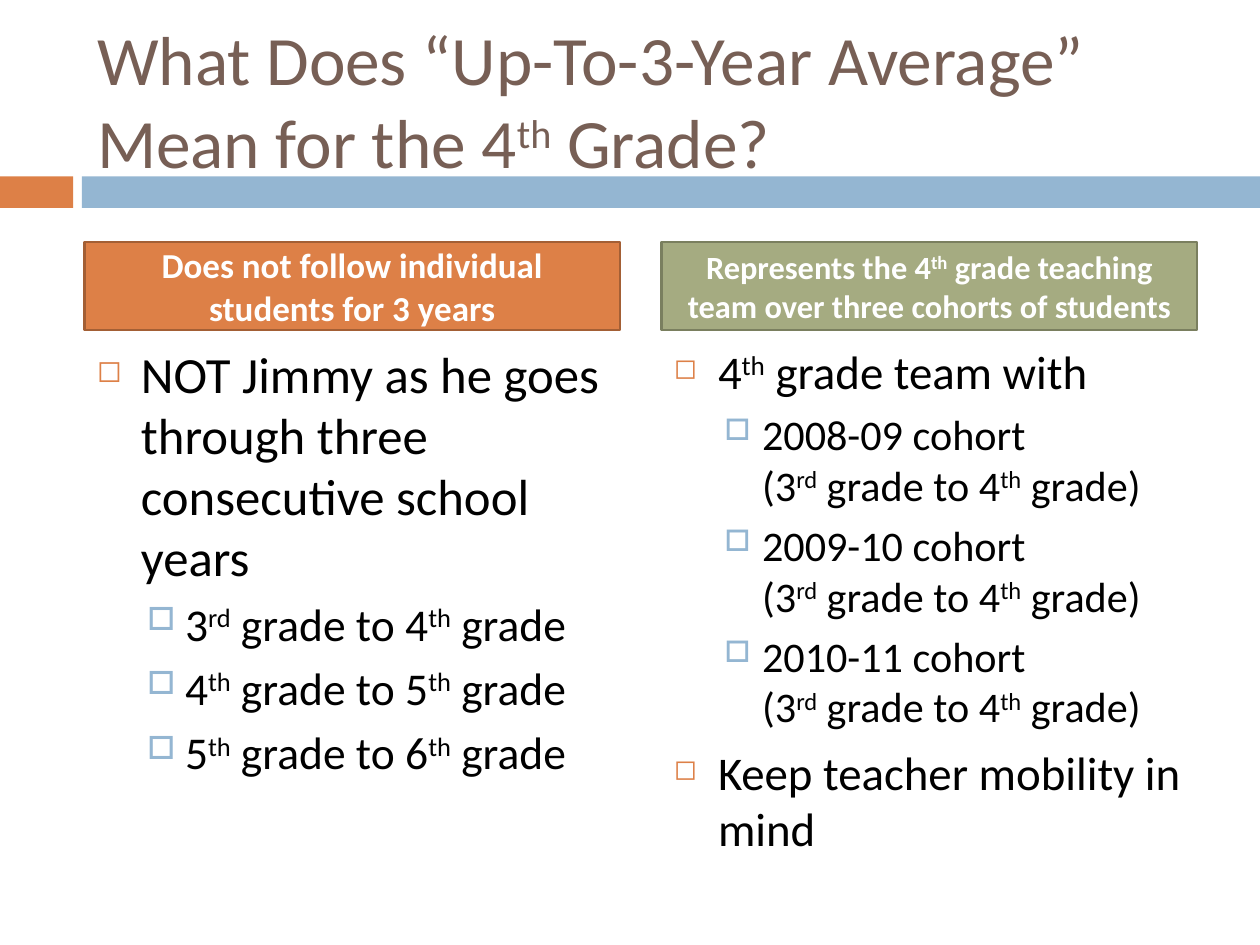
from collections import namedtuple

from lxml.etree import SubElement
from pptx import Presentation
from pptx.dml.color import RGBColor
from pptx.enum.shapes import MSO_SHAPE as Shape
from pptx.enum.text import MSO_ANCHOR as Anchor, MSO_AUTO_SIZE as AutoSize, PP_ALIGN as Align
from pptx.oxml.ns import qn
from pptx.util import Inches, Pt

ORANGE = RGBColor(0xDD, 0x80, 0x47)
DARK_ORANGE = RGBColor(0xA3, 0x5F, 0x35)
BLUE = RGBColor(0x94, 0xB6, 0xD2)
GREEN = RGBColor(0xA5, 0xAB, 0x81)
DARK_GREEN = RGBColor(0x7A, 0x7F, 0x5F)
BROWN = RGBColor(0x77, 0x5F, 0x55)
BLACK = RGBColor(0, 0, 0)
WHITE = RGBColor(0xFF, 0xFF, 0xFF)

Box = namedtuple("Box", "left top width height")
Level = namedtuple("Level", "margin hanging before mark color percent")
LEVELS = [Level(0.35, 0.35, 7, "◻", ORANGE, 60), Level(0.7, 0.3, 5.5, "□", BLUE, 70)]

MARGIN, COLUMN_WIDTH, COLUMN_STEP = 0.67, 4.25, 4.58
HEADER_HEIGHT, HEADER_GAP = 0.7, 0.05

TITLE = "What Does “Up-To-3-Year Average” Mean for the 4^th^ Grade?"
LEFT_ITEMS = [(0, "NOT Jimmy as he goes through three consecutive school years")] + [
    (1, f"{start} grade to {end} grade")
    for start, end in [("3^rd^", "4^th^"), ("4^th^", "5^th^"), ("5^th^", "6^th^")]
]
RIGHT_ITEMS = (
    [(0, "4^th^ grade team with")]
    + [(1, f"{years} cohort \n(3^rd^ grade to 4^th^ grade)")
       for years in ("2008-09", "2009-10", "2010-11")]
    + [(0, "Keep teacher mobility in mind")]
)


def inches(box):
    """Return the box as lengths for a shape."""
    return [Inches(value) for value in box]


def write(para, text, size, color, bold=False):
    """Fill a paragraph, raising the parts between carets."""
    for index, part in enumerate(text.split("^")):
        for row, line in enumerate(part.split("\n")):
            if row:
                para.add_line_break()
            span = para.add_run()
            span.text = line
            if index % 2:
                span.font._element.set("baseline", "30000")
    font = para.font
    font.name, font.size, font.bold = "Calibri", Pt(size), bold
    font.color.rgb = color


def add_bullet(para, level):
    """Give a paragraph the indent and mark of its level."""
    props = para._p.get_or_add_pPr()
    props.set("marL", str(Inches(level.margin)))
    props.set("indent", str(-Inches(level.hanging)))
    color = SubElement(props, qn("a:buClr"))
    SubElement(color, qn("a:srgbClr"), val=str(level.color))
    SubElement(props, qn("a:buSzPct"), val=str(level.percent * 1000))
    SubElement(props, qn("a:buChar"), char=level.mark)


def add_block(page, box, fill, line=None):
    """Add a filled rectangle, outlined when a line colour is given."""
    block = page.shapes.add_shape(Shape.RECTANGLE, *inches(box))
    block.shadow.inherit = False
    block.fill.solid()
    block.fill.fore_color.rgb = fill
    if line is None:
        block.line.fill.background()
    else:
        block.line.color.rgb = line
        block.line.width = Pt(1.5)
    return block


def add_band(page, box, split, gap):
    """Place the two-coloured band below the title."""
    add_block(page, box._replace(width=split), ORANGE)
    start = split + gap
    add_block(page, box._replace(left=box.left + start, width=box.width - start), BLUE)


def add_title(page, box):
    """Move and format the title placeholder."""
    title = page.shapes.title
    title.left, title.top, title.width, title.height = inches(box)
    frame = title.text_frame
    frame.word_wrap, frame.auto_size = True, AutoSize.NONE
    frame.vertical_anchor = Anchor.MIDDLE
    para = frame.paragraphs[0]
    para.alignment = Align.LEFT
    write(para, TITLE, 39.6, BROWN)


def add_header(page, box, text, size, fill, line):
    """Place the coloured heading of a column."""
    frame = add_block(page, box, fill, line).text_frame
    frame.word_wrap = True
    frame.vertical_anchor = Anchor.MIDDLE
    para = frame.paragraphs[0]
    para.alignment = Align.CENTER
    write(para, text, size, WHITE, bold=True)


def add_list(page, box, items, sizes):
    """Place a bulleted list with one text size for each level."""
    frame = page.shapes.add_textbox(*inches(box)).text_frame
    frame.word_wrap = True
    for index, (depth, text) in enumerate(items):
        para = frame.add_paragraph() if index else frame.paragraphs[0]
        para.level = depth
        add_bullet(para, LEVELS[depth])
        if index:
            para.space_before = Pt(LEVELS[depth].before)
        write(para, text, sizes[depth], BLACK)


def add_column(page, box, header, items, sizes):
    """Stack a heading and its list in the box."""
    add_header(page, box._replace(height=HEADER_HEIGHT), *header)
    offset = HEADER_HEIGHT + HEADER_GAP
    add_list(page, box._replace(top=box.top + offset, height=box.height - offset), items, sizes)


def main():
    """Build and save the slide."""
    deck = Presentation()
    deck.slide_width, deck.slide_height = Inches(10), Inches(7.5)
    page = deck.slides.add_slide(deck.slide_layouts[5])
    add_band(page, Box(0, 1.4, 10, 0.25), 0.58, 0.07)
    add_title(page, Box(MARGIN, 0.25, 8.92, 1.08))
    columns = [
        (("Does not follow individual students for 3 years", 20, ORANGE, DARK_ORANGE),
         LEFT_ITEMS, (29, 26)),
        (("Represents the 4^th^ grade teaching team over three cohorts of students",
          18.5, GREEN, DARK_GREEN), RIGHT_ITEMS, (26.8, 24.1)),
    ]
    for index, column in enumerate(columns):
        left = MARGIN + index * COLUMN_STEP
        add_column(page, Box(left, 1.92, COLUMN_WIDTH, 4.67), *column)
    deck.save("out.pptx")


if __name__ == "__main__":
    main()
